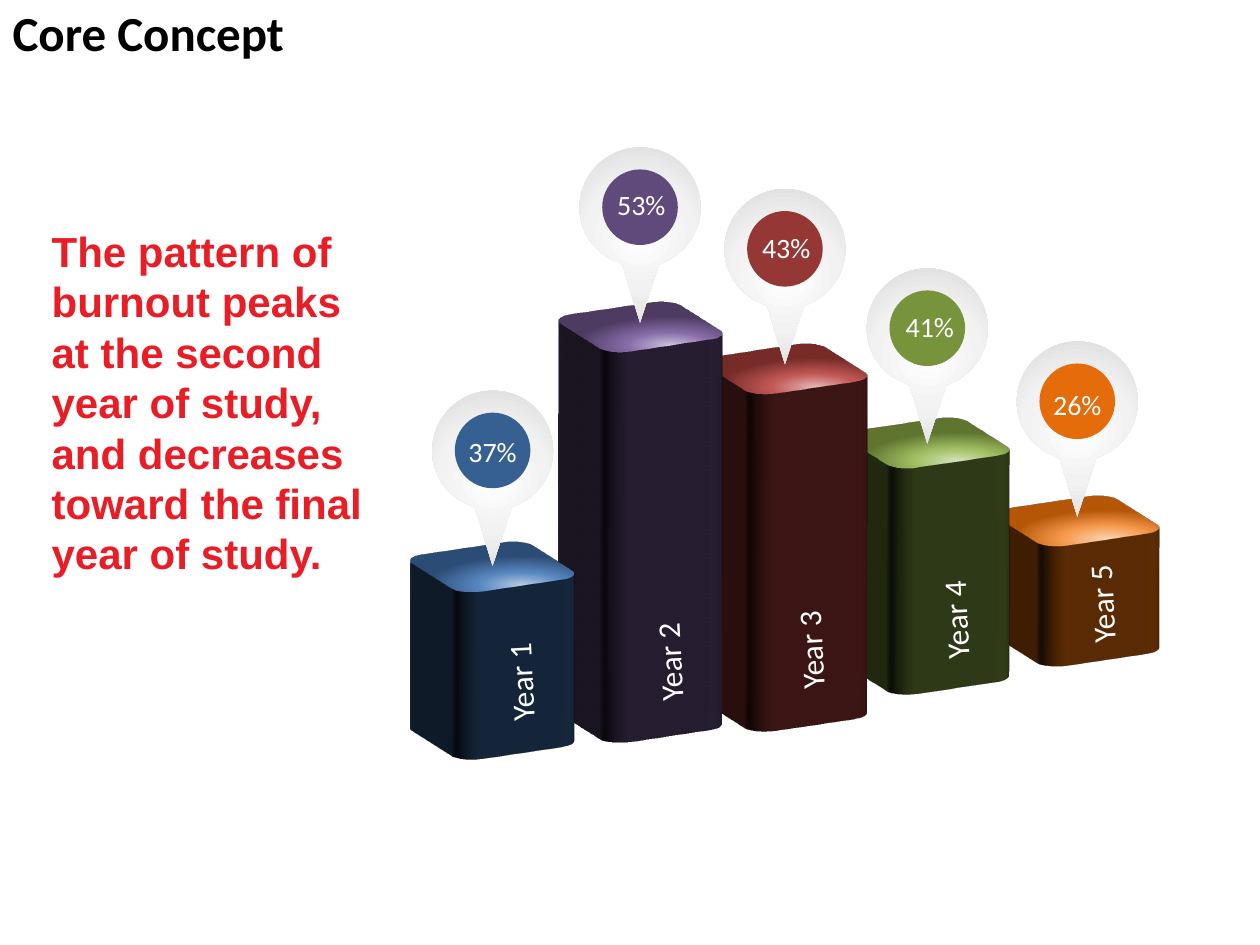
import collections
import dataclasses

import pptx
import pptx.dml.color
import pptx.enum.shapes
import pptx.enum.text
import pptx.oxml
import pptx.oxml.ns
import pptx.util

WIDE = pptx.util.Inches(10)
HIGH = pptx.util.Inches(7.5)
CELL = WIDE / 100
SHAPES = pptx.enum.shapes.MSO_SHAPE


@dataclasses.dataclass(frozen=True)
class Theme:
    sans: str = "Calibri"
    bold: str = "Arial"
    ink: str = "000000"
    red: str = "E91D26"
    pale: str = "FFFFFF"
    pin: tuple = ("FFFFFF", "F2F2F2", "D9D9D9")
    head: int = 28
    lead: int = 24
    year: int = 18
    rate: int = 16


THEME = Theme()
Bar = collections.namedtuple("Bar", "year rate left top deep pin note label tints dot")

BARS = [
    Bar("Year 1", "37%", 33.8, 39.7, 13.9, 31, (36.1, 34), (37, 51.9),
        ("B9CDE5", "5887C0", "2C4D75"), "376092"),
    Bar("Year 2", "53%", 45.5, 20.7, 32.5, 11.7, (47.9, 14.4), (48.8, 50.3),
        ("CCC1DA", "866CA7", "4D3B62"), "604A7B"),
    Bar("Year 3", "43%", 57, 24, 28.1, 15, (59.4, 17.8), (60, 49.4),
        ("E6B9B8", "C35956", "772C2A"), "953735"),
    Bar("Year 4", "41%", 68.3, 29.9, 18.8, 21.3, (70.8, 24.1), (71.5, 47),
        ("D7E4BD", "A0BE61", "5F7530"), "77933C"),
    Bar("Year 5", "26%", 80.2, 36.1, 10, 27.1, (82.5, 30.3), (83.1, 45.7),
        ("FCD5B5", "F79B4F", "B65708"), "E46C0A"),
]
PIN = [
    [(4.8, 0)],
    [(7.5, 0), (9.6, 2.1), (9.6, 4.8)],
    [(9.6, 6.7), (8.4, 8.4), (6.7, 9.1)],
    [(6.3, 9.3)],
    [(4.8, 13.9)],
    [(3.4, 9.3)],
    [(3, 9.1)],
    [(1.2, 8.4), (0, 6.7), (0, 4.8)],
    [(0, 2.1), (2.2, 0), (4.8, 0)],
]


def emu(*cells):
    return [round(cell * CELL) for cell in cells]


def rgb(code):
    return pptx.dml.color.RGBColor.from_string(code)


def node(tag, inner="", **marks):
    names = pptx.oxml.ns.nsdecls("a")
    attrs = " ".join(f'{key}="{val}"' for key, val in marks.items())
    return pptx.oxml.parse_xml(f"<a:{tag} {names} {attrs}>{inner}</a:{tag}>")


def blend(shape, tints, spots, focus):
    stops = "".join(
        f'<a:gs pos="{spot * 1000}"><a:srgbClr val="{tint}"/></a:gs>'
        for spot, tint in zip(spots, tints)
    )
    rect = (
        f'<a:fillToRect l="50000" t="{focus * 1000}" r="50000" b="{(100 - focus) * 1000}"/>'
    )
    fill = node("gradFill", f'<a:gsLst>{stops}</a:gsLst><a:path path="circle">{rect}</a:path>')
    shape.fill.solid()
    props = shape._element.spPr
    props.replace(props.find(pptx.oxml.ns.qn("a:solidFill")), fill)


def plain(shape):
    shape.shadow.inherit = False
    shape.line.fill.background()
    return shape


def write(frame, text, size, code, font=THEME.sans, bold=False):
    para = frame.paragraphs[0]
    run = para.add_run()
    run.text = text
    run.font.name = font
    run.font.size = pptx.util.Pt(size)
    run.font.bold = bold
    run.font.color.rgb = rgb(code)
    return para


def label(slide, spot, size, text, height):
    box = slide.shapes.add_textbox(*emu(*spot, *size))
    box.text_frame.word_wrap = True
    return box, write(box.text_frame, text, height, THEME.pale)


def holder(shape, spot, text, size, code, font):
    shape.left, shape.top, shape.width, shape.height = emu(*spot)
    frame = shape.text_frame
    frame.word_wrap = True
    frame.auto_size = pptx.enum.text.MSO_AUTO_SIZE.NONE
    frame.vertical_anchor = pptx.enum.text.MSO_ANCHOR.TOP
    para = write(frame, text, size, code, font, True)
    para.alignment = pptx.enum.text.PP_ALIGN.LEFT
    para.space_before = pptx.util.Pt(0)
    return para


def block(slide, bar):
    spot = emu(bar.left, bar.top, 10.6, 10.6)
    shape = plain(slide.shapes.add_shape(SHAPES.ROUNDED_RECTANGLE, *spot))
    blend(shape, bar.tints, (0, 46, 100), 130)
    scene = node(
        "scene3d",
        '<a:camera prst="isometricOffAxis1Top"/><a:lightRig rig="threePt" dir="t"/>',
    )
    tint = f'<a:extrusionClr><a:srgbClr val="{bar.tints[-1]}"/></a:extrusionClr>'
    solid = node("sp3d", tint, extrusionH=emu(bar.deep)[0])
    props = shape._element.spPr
    props.append(scene)
    props.append(solid)


def pin(slide, bar):
    left = bar.left + 0.5
    ends = [emu(left + x, bar.pin + y) for x, y in (part[-1] for part in PIN)]
    pen = slide.shapes.build_freeform(*ends[0], scale=1.0)
    pen.add_line_segments(ends[1:], close=True)
    drop = plain(pen.convert_to_shape())
    lines = list(drop._element.iter(pptx.oxml.ns.qn("a:lnTo")))
    for line, part in zip(lines, PIN[1:]):
        if len(part) == 3:
            spots = [emu(*spot) for spot in part]
            inner = "".join(f'<a:pt x="{x}" y="{y}"/>' for x, y in spots)
            line.getparent().replace(line, node("cubicBezTo", inner))
    blend(drop, THEME.pin, (0, 50, 100), 50)
    spot = emu(left + 1.8, bar.pin + 1.75, 6, 6)
    dot = plain(slide.shapes.add_shape(SHAPES.OVAL, *spot))
    dot.fill.solid()
    dot.fill.fore_color.rgb = rgb(bar.dot)


def main():
    deck = pptx.Presentation()
    deck.slide_width, deck.slide_height = WIDE, HIGH
    slide = deck.slides.add_slide(deck.slide_layouts[1])
    title, body = slide.placeholders
    holder(title, (0, -0.3, 40, 5.7), "Core Concept", THEME.head, THEME.ink, THEME.sans)
    text = (
        "The pattern of burnout peaks at the second year of study, "
        "and decreases toward the final year of study."
    )
    para = holder(body, (3.1, 17.4, 27.5, 29.3), text, THEME.lead, THEME.red, THEME.bold)
    props = para._p.get_or_add_pPr()
    props.set("marL", "0")
    props.set("indent", "0")
    props.append(node("buNone"))
    for bar in reversed(BARS):
        block(slide, bar)
        pin(slide, bar)
    for bar in BARS:
        box, para = label(slide, bar.note, (6, 3.7), bar.rate, THEME.rate)
        para.alignment = pptx.enum.text.PP_ALIGN.CENTER
    for bar in BARS:
        box, para = label(slide, bar.label, (8.6, 4), bar.year, THEME.year)
        box.rotation = 267.1
    deck.save("out.pptx")


if __name__ == "__main__":
    main()
